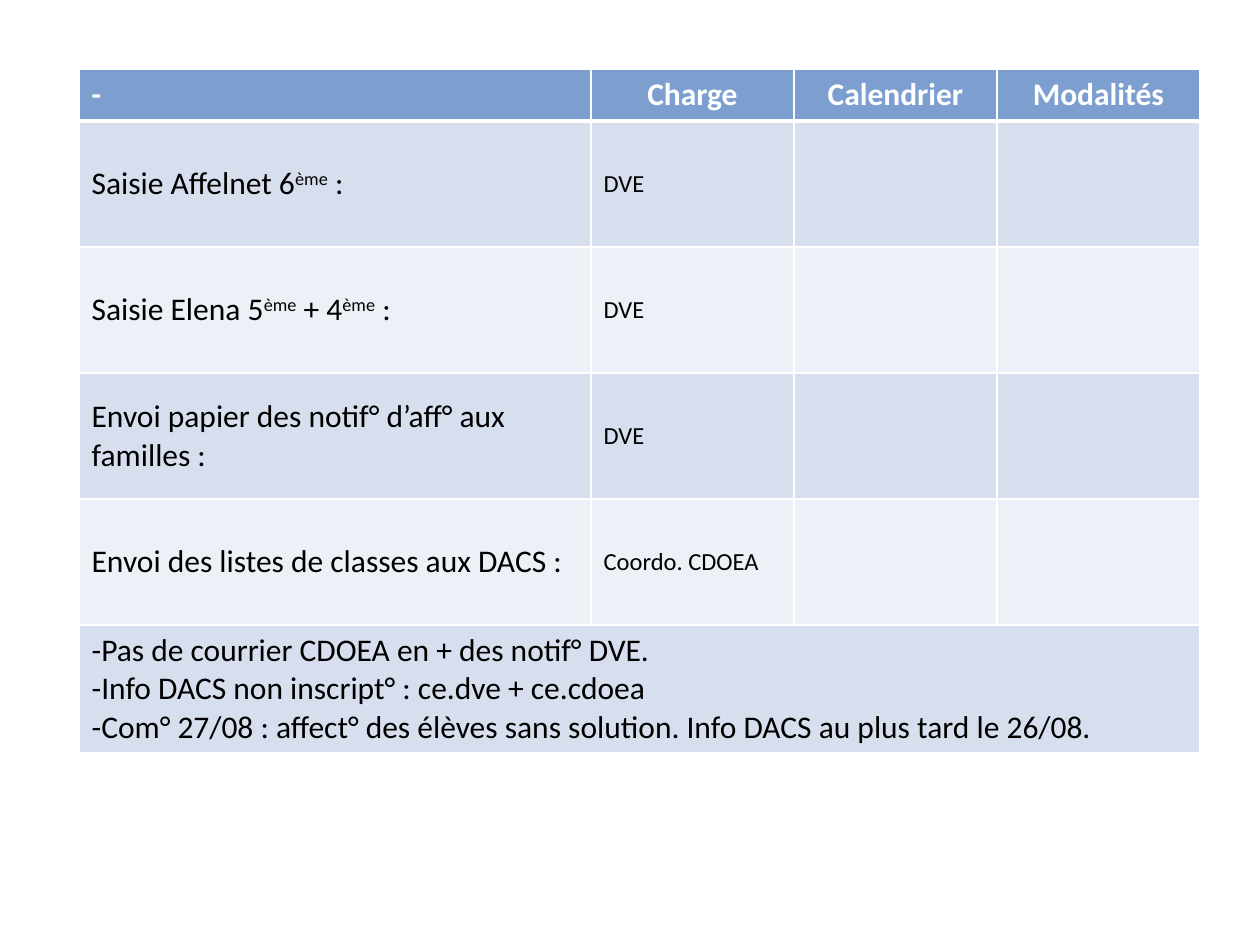
"""Build a task table slide with owners, dates and means."""
from dataclasses import dataclass

from lxml import etree
from pptx import Presentation
from pptx.dml.color import RGBColor
from pptx.enum.text import MSO_ANCHOR, PP_ALIGN
from pptx.oxml.ns import qn
from pptx.table import Table, _Cell
from pptx.util import Emu, Pt

TOP, MIDDLE = MSO_ANCHOR.TOP, MSO_ANCHOR.MIDDLE
LEFT, CENTER = PP_ALIGN.LEFT, PP_ALIGN.CENTER
SCALE = 914400 / 126


@dataclass(frozen=True)
class Theme:
    font: str = "Calibri"
    head: str = "7C9FD0"
    bands: tuple[str, str] = ("D7DFEE", "ECF0F7")
    white: str = "FFFFFF"
    ink: str = "000000"
    large: int = 18
    small: int = 14
    thin: int = 1
    thick: int = 3


@dataclass(frozen=True)
class Look:
    fill: str
    ink: str
    size: int
    bold: bool = False
    align: PP_ALIGN = LEFT
    anchor: MSO_ANCHOR = MIDDLE
    upper: int = 1
    lower: int = 1


@dataclass(frozen=True)
class Task:
    name: str
    owner: str


THEME = Theme()
HEADS = ("-", "Charge", "Calendrier", "Modalités")
TASKS = (
    Task("Saisie Affelnet 6^ème^ :", "DVE"),
    Task("Saisie Elena 5^ème^ + 4^ème^ :", "DVE"),
    Task("Envoi papier des notif° d’aff° aux familles :", "DVE"),
    Task("Envoi des listes de classes aux DACS :", "Coordo. CDOEA"),
)
NOTES = (
    "-Pas de courrier CDOEA en + des notif° DVE.",
    "-Info DACS non inscript° : ce.dve + ce.cdoea",
    "-Com° 27/08 : affect° des élèves sans solution. Info DACS au plus tard le 26/08.",
)
COLS = (512, 203, 203, 203)
ROWS = (52,) + (126,) * (len(TASKS) + 1)


def px(count: int) -> Emu:
    """Turn pixels into EMU."""
    return Emu(round(count * SCALE))


def edge(cell: _Cell, side: str, width: int) -> None:
    """Draw one white border of a cell."""
    props = cell._tc.get_or_add_tcPr()
    line = etree.SubElement(props, qn(f"a:ln{side}"), w=str(Pt(width)))
    fill = etree.SubElement(line, qn("a:solidFill"))
    etree.SubElement(fill, qn("a:srgbClr"), val=THEME.white)


def write(cell: _Cell, lines: tuple[str, ...], look: Look) -> None:
    """Style a cell and add its lines, raising the parts between carets."""
    for side, width in zip("LRTB", (THEME.thin, THEME.thin, look.upper, look.lower)):
        edge(cell, side, width)
    cell.fill.solid()
    cell.fill.fore_color.rgb = RGBColor.from_string(look.fill)
    cell.vertical_anchor = look.anchor
    frame = cell.text_frame
    for row, text in enumerate(lines):
        para = frame.add_paragraph() if row else frame.paragraphs[0]
        para.alignment = look.align
        for part, words in enumerate(text.split("^")):
            if not words:
                continue
            run = para.add_run()
            run.text = words
            run.font.name = THEME.font
            run.font.size = Pt(look.size)
            run.font.bold = look.bold
            run.font.color.rgb = RGBColor.from_string(look.ink)
            if part % 2:
                run._r.get_or_add_rPr().set("baseline", "30000")


def fill_head(table: Table) -> None:
    """Write the header row."""
    for col, text in enumerate(HEADS):
        look = Look(THEME.head, THEME.white, THEME.large, True,
                    CENTER if col else LEFT, TOP, lower=THEME.thick)
        write(table.cell(0, col), (text,), look)


def fill_body(table: Table) -> None:
    """Write the task rows and the merged notes row."""
    last = len(ROWS) - 1
    table.cell(last, 0).merge(table.cell(last, len(COLS) - 1))
    texts = [((task.name,), (task.owner,), (), ()) for task in TASKS]
    texts.append((NOTES, (), (), ()))
    for row, cells in enumerate(texts, 1):
        for col, lines in enumerate(cells):
            look = Look(THEME.bands[(row - 1) % 2], THEME.ink,
                        THEME.small if col else THEME.large,
                        upper=THEME.thick if row == 1 else THEME.thin)
            write(table.cell(row, col), lines, look)


def main() -> None:
    """Create and save the slide."""
    deck = Presentation()
    deck.slide_width, deck.slide_height = px(1260), px(945)
    slide = deck.slides.add_slide(deck.slide_layouts[6])
    table = slide.shapes.add_table(len(ROWS), len(COLS), px(79), px(69),
                                   px(sum(COLS)), px(sum(ROWS))).table
    for col, width in zip(table.columns, COLS):
        col.width = px(width)
    for row, height in zip(table.rows, ROWS):
        row.height = px(height)
    fill_head(table)
    fill_body(table)
    deck.save("out.pptx")


if __name__ == "__main__":
    main()
